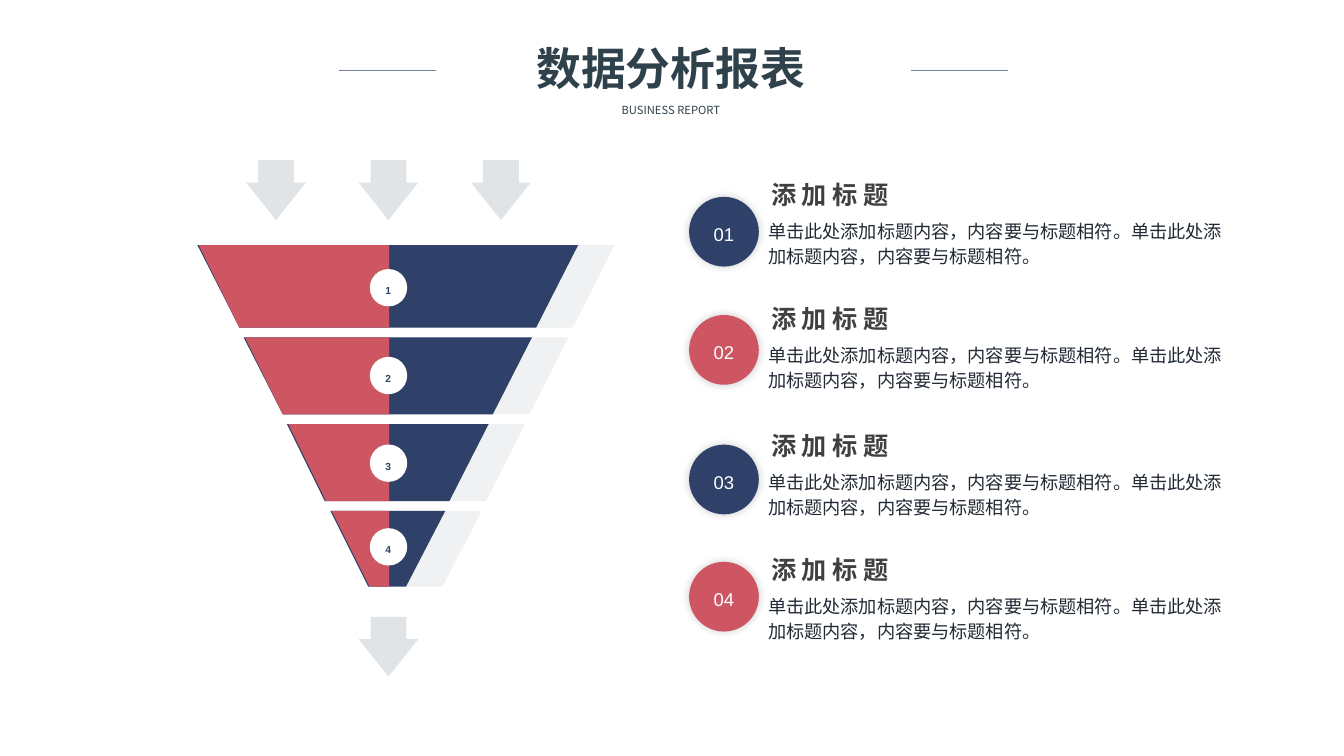
"""Build a funnel report slide with four numbered notes."""
from lxml.etree import SubElement
from pptx import Presentation
from pptx.dml.color import RGBColor
from pptx.enum.shapes import MSO_CONNECTOR, MSO_SHAPE
from pptx.enum.text import MSO_ANCHOR, MSO_AUTO_SIZE, PP_ALIGN
from pptx.oxml.ns import qn
from pptx.util import Pt


class Theme:
    navy, red, white = "2F4168", "CE5662", "FFFFFF"
    pale, rule = "E0E4E6", "768394"
    title, head, body = "2F414B", "404040", "222A35"
    sans, han = "Arial", "Noto Sans CJK SC"
    title_size, sub_size, head_size, body_size = 32, 8, 18, 13
    disc_size, badge_size = 13.2, 12.5


def paint(shape, color):
    shape.shadow.inherit = False
    shape.fill.solid()
    shape.fill.fore_color.rgb = RGBColor.from_string(color)
    shape.line.fill.background()
    return shape


def write(shape, text, size, font, color, bold=False, align=None, inset=None, space=None):
    frame = shape.text_frame
    frame.text = text
    frame.word_wrap = True
    if inset is not None:
        frame.margin_left = frame.margin_right = Pt(inset)
        frame.margin_top = frame.margin_bottom = Pt(inset)
        frame.vertical_anchor = MSO_ANCHOR.MIDDLE
    para = frame.paragraphs[0]
    para.alignment = align
    para.line_spacing = space
    run = para.runs[0]
    run.font.size = Pt(size)
    run.font.bold = bold
    run.font.name = font
    run.font.color.rgb = RGBColor.from_string(color)
    props = run.font._element
    SubElement(props, qn("a:ea"), typeface=font)
    return props


deck = Presentation()
deck.slide_width, deck.slide_height = Pt(960), Pt(540)
slide = deck.slides.add_slide(deck.slide_layouts[6])
shapes = slide.shapes
center = PP_ALIGN.CENTER

left, right, top, middle, shift = 141.1, 412.6, 175, 277.6, 26
bands = [(175, 234), (241.2, 295.9), (303.1, 357.8), (365, 419.2)]
ghosts = shapes.add_group_shape().shapes
layers = [
    (ghosts, left + shift, right + shift, Theme.pale),
    (shapes, left, right, Theme.navy),
    (shapes, left + 0.5, None, Theme.red),
]
for target, start, end, color in layers:
    for high, low in bands:
        slant = [(y - top) / 2 for y in (high, low)]
        ends = [end - s if end else middle for s in slant]
        form = target.build_freeform(start + slant[0], high, scale=Pt(1))
        form.add_line_segments([(start + slant[1], low), (ends[1], low), (ends[0], high)])
        band = paint(form.convert_to_shape(), color)
        if target is ghosts:
            tint = band.fill._xPr.find(qn("a:solidFill"))[0]
            SubElement(tint, qn("a:alpha"), val="49000")

for count, y in enumerate((192.2, 254.9, 317.5, 377.3), 1):
    paint(shapes.add_shape(MSO_SHAPE.OVAL, Pt(264.2), Pt(y), Pt(26.7), Pt(26.7)), Theme.white)
    label = shapes.add_textbox(Pt(265), Pt(y + 15.3), Pt(24.5), Pt(11.5))
    props = write(label, str(count), Theme.badge_size, Theme.sans, Theme.navy,
                  True, center, 2.2, 0.7)
    props.set("baseline", "48000")
    label.text_frame.auto_size = MSO_AUTO_SIZE.SHAPE_TO_FIT_TEXT

inflow = shapes.add_group_shape().shapes
spots = [(inflow, 175.8 + 80.3 * i, 114.5) for i in range(3)] + [(shapes, 256.1, 440.6)]
for target, x, y in spots:
    arrow = target.add_shape(MSO_SHAPE.RIGHT_ARROW, Pt(x), Pt(y), Pt(42.7), Pt(42.7))
    arrow.rotation = 90
    arrow.adjustments[0], arrow.adjustments[1] = 0.6, 0.627
    paint(arrow, Theme.pale)

titles = [
    ("BUSINESS REPORT", (422, 70.6, 114.5, 17.3), Theme.sub_size, False),
    ("数据分析报表", (331.2, 25.2, 296, 46), Theme.title_size, True),
]
for text, place, size, bold in titles:
    box = shapes.add_textbox(*map(Pt, place))
    write(box, text, size, Theme.han, Theme.title, bold, center)
    box.text_frame.auto_size = MSO_AUTO_SIZE.SHAPE_TO_FIT_TEXT

for x in (311.4, 720):
    rule = shapes.add_connector(MSO_CONNECTOR.STRAIGHT, Pt(x), Pt(50.4), Pt(x - 69), Pt(50.4))
    rule.line.color.rgb = RGBColor.from_string(Theme.rule)
    rule.line.width = Pt(0.5)
    SubElement(rule._element.spPr, qn("a:effectLst"))

heading = "添加标题"
detail = "单击此处添加标题内容，内容要与标题相符。" * 2
notes = [(140.6, 124.6), (225, 213.1), (317.6, 303.9), (401.3, 392.4)]
for count, (y, head) in enumerate(notes, 1):
    note = shapes.add_group_shape().shapes
    disc = note.add_shape(MSO_SHAPE.OVAL, Pt(492.2), Pt(y), Pt(49.8), Pt(49.8))
    paint(disc, Theme.navy if count % 2 else Theme.red)
    glow = SubElement(disc._element.spPr.find(qn("a:effectLst")), qn("a:outerShdw"),
                      blurRad=str(Pt(6)), dist="0", dir="18900000", rotWithShape="0")
    shade = SubElement(glow, qn("a:srgbClr"), val="000000")
    SubElement(shade, qn("a:alpha"), val="20000")
    write(disc, f"{count:02}", Theme.disc_size, Theme.sans, Theme.white,
          False, center, 0, 1.2)
    body = note.add_textbox(Pt(541.6), Pt(head + 26.8), Pt(347), Pt(61.2))
    write(body, detail, Theme.body_size, Theme.han, Theme.body, space=Pt(18))
    title = note.add_textbox(Pt(543.8), Pt(head), Pt(144), Pt(29))
    props = write(title, heading, Theme.head_size, Theme.han, Theme.head, True)
    props.set("spc", "400")
    for box in (body, title):
        box.text_frame.auto_size = MSO_AUTO_SIZE.SHAPE_TO_FIT_TEXT

deck.save("out.pptx")
